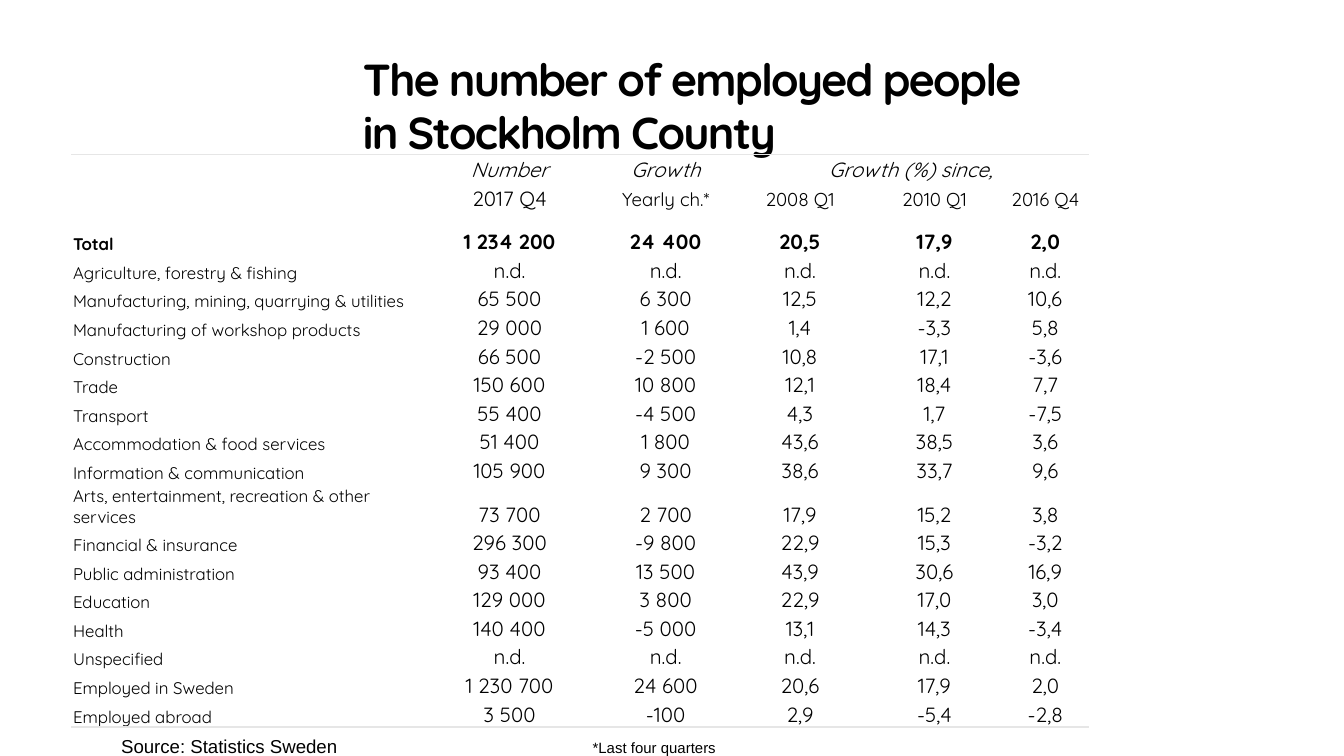
from dataclasses import dataclass

from lxml import etree
from pptx import Presentation
from pptx.dml.color import RGBColor
from pptx.enum.text import MSO_ANCHOR, MSO_AUTO_SIZE, PP_ALIGN
from pptx.oxml.ns import qn
from pptx.util import Cm, Pt

LEFT, CENTER = PP_ALIGN.LEFT, PP_ALIGN.CENTER
BOTTOM = MSO_ANCHOR.BOTTOM
NO_AUTOFIT = MSO_AUTO_SIZE.NONE

COLORS = {"text": "000000", "rule": "E6E6E6"}
TABLE_FONT, NOTE_FONT = "Quicksand", "Arial"
PLAIN_TABLE_STYLE = "{2D5ABB26-0587-4C30-8999-92F81FD0307C}"

COLUMN_WIDTHS = [6.6, 3.36, 2.54, 2.54, 2.54, 1.65]
ROW_HEIGHT, TOTAL_ROW_HEIGHT = 0.54, 0.82
TOTAL_ROW = 2

ROWS = [
    ["", "Number", "Growth", "Growth (%) since,", "", ""],
    ["", "2017 Q4", "Yearly ch.*", "2008 Q1", "2010 Q1", "2016 Q4"],
    ["Total", "1 234 200", "24 400", "20,5", "17,9", "2,0"],
    ["Agriculture, forestry & fishing"] + ["n.d."] * 5,
    ["Manufacturing, mining, quarrying & utilities", "65 500", "6 300", "12,5", "12,2", "10,6"],
    ["Manufacturing of workshop products", "29 000", "1 600", "1,4", "-3,3", "5,8"],
    ["Construction", "66 500", "-2 500", "10,8", "17,1", "-3,6"],
    ["Trade", "150 600", "10 800", "12,1", "18,4", "7,7"],
    ["Transport", "55 400", "-4 500", "4,3", "1,7", "-7,5"],
    ["Accommodation & food services", "51 400", "1 800", "43,6", "38,5", "3,6"],
    ["Information & communication", "105 900", "9 300", "38,6", "33,7", "9,6"],
    ["Arts, entertainment, recreation & other services", "73 700", "2 700", "17,9", "15,2", "3,8"],
    ["Financial & insurance", "296 300", "-9 800", "22,9", "15,3", "-3,2"],
    ["Public administration", "93 400", "13 500", "43,9", "30,6", "16,9"],
    ["Education", "129 000", "3 800", "22,9", "17,0", "3,0"],
    ["Health", "140 400", "-5 000", "13,1", "14,3", "-3,4"],
    ["Unspecified"] + ["n.d."] * 5,
    ["Employed in Sweden", "1 230 700", "24 600", "20,6", "17,9", "2,0"],
    ["Employed abroad", "3 500", "-100", "2,9", "-5,4", "-2,8"],
]


@dataclass
class TextStyle:
    font: str
    size: float
    bold: bool = False
    italic: bool = False


@dataclass
class Note:
    text: str
    left: float
    size: float


TITLE_LINES = ["The number of employed people", "in Stockholm County"]
TITLE_STYLE = TextStyle(TABLE_FONT, 24, bold=True)
NOTES = [
    Note("Source: Statistics Sweden", 2.29, 10),
    Note("*Last four quarters", 11.2, 8),
]


def add_run(paragraph, text: str, style: TextStyle):
    run = paragraph.add_run()
    run.text = text
    font = run.font
    font.name, font.size = style.font, Pt(style.size)
    font.bold, font.italic = style.bold, style.italic
    font.color.rgb = RGBColor.from_string(COLORS["text"])
    return run


def add_text_frame(slide, left: float, top: float, width: float, height: float, wrap: bool):
    box = slide.shapes.add_textbox(Cm(left), Cm(top), Cm(width), Cm(height))
    frame = box.text_frame
    frame.word_wrap = wrap
    frame.auto_size = NO_AUTOFIT
    frame.margin_left = frame.margin_right = frame.margin_top = frame.margin_bottom = 0
    return frame


def add_title(slide) -> None:
    paragraph = add_text_frame(slide, 6.86, 0.97, 23.37, 2.03, True).paragraphs[0]
    for index, line in enumerate(TITLE_LINES):
        if index:
            paragraph.add_line_break()
        run = add_run(paragraph, line, TITLE_STYLE)
        run.font._element.set("spc", "-90")


def add_note(slide, note: Note) -> None:
    paragraph = add_text_frame(slide, note.left, 13.46, 2.54, 1.07, False).paragraphs[0]
    paragraph.alignment = LEFT
    paragraph.line_spacing = Pt(24)
    add_run(paragraph, note.text, TextStyle(NOTE_FONT, note.size))


def add_rule(cell, edge: str) -> None:
    """Draw a thin line on one edge of a cell: lnT or lnB."""
    line = etree.Element(qn(f"a:{edge}"), w=str(Pt(1)))
    fill = etree.SubElement(line, qn("a:solidFill"))
    etree.SubElement(fill, qn("a:srgbClr"), val=COLORS["rule"])
    cell._tc.get_or_add_tcPr().insert(0, line)


def cell_style(row: int, column: int) -> TextStyle:
    if column == 0:
        size = 9
    elif row == 1 and column > 1:
        size = 10
    else:
        size = 11
    return TextStyle(TABLE_FONT, size, bold=row == TOTAL_ROW, italic=row == 0)


def fill_cell(cell, text: str, row: int, column: int) -> None:
    cell.fill.background()
    cell.vertical_anchor = BOTTOM
    cell.margin_left = cell.margin_right = cell.margin_top = Cm(0.03)
    cell.margin_bottom = 0
    paragraph = cell.text_frame.paragraphs[0]
    paragraph.alignment = CENTER if column else LEFT
    if text:
        add_run(paragraph, text, cell_style(row, column))
    else:
        # Small empty cells keep the row from growing
        etree.SubElement(paragraph._p, qn("a:endParaRPr"), sz="900")
    if row == 0:
        add_rule(cell, "lnT")
    elif row == len(ROWS) - 1:
        add_rule(cell, "lnB")


def add_employment_table(slide) -> None:
    heights = [TOTAL_ROW_HEIGHT if row == TOTAL_ROW else ROW_HEIGHT for row in range(len(ROWS))]
    table = slide.shapes.add_table(
        len(ROWS), len(COLUMN_WIDTHS), Cm(1.35), Cm(2.92),
        Cm(sum(COLUMN_WIDTHS)), Cm(sum(heights)),
    ).table
    table.first_row = table.horz_banding = False
    table._tbl.tblPr.find(qn("a:tableStyleId")).text = PLAIN_TABLE_STYLE
    for column, width in zip(table.columns, COLUMN_WIDTHS):
        column.width = Cm(width)
    for row, height in zip(table.rows, heights):
        row.height = Cm(height)
    table.cell(0, 3).merge(table.cell(0, 5))
    for row, texts in enumerate(ROWS):
        for column, text in enumerate(texts):
            fill_cell(table.cell(row, column), text, row, column)


def main() -> None:
    presentation = Presentation()
    presentation.slide_width, presentation.slide_height = Cm(25.4), Cm(14.29)
    slide = presentation.slides.add_slide(presentation.slide_layouts[6])
    add_title(slide)
    source, footnote = NOTES
    add_note(slide, source)
    add_employment_table(slide)
    add_note(slide, footnote)
    presentation.save("out.pptx")


if __name__ == "__main__":
    main()
